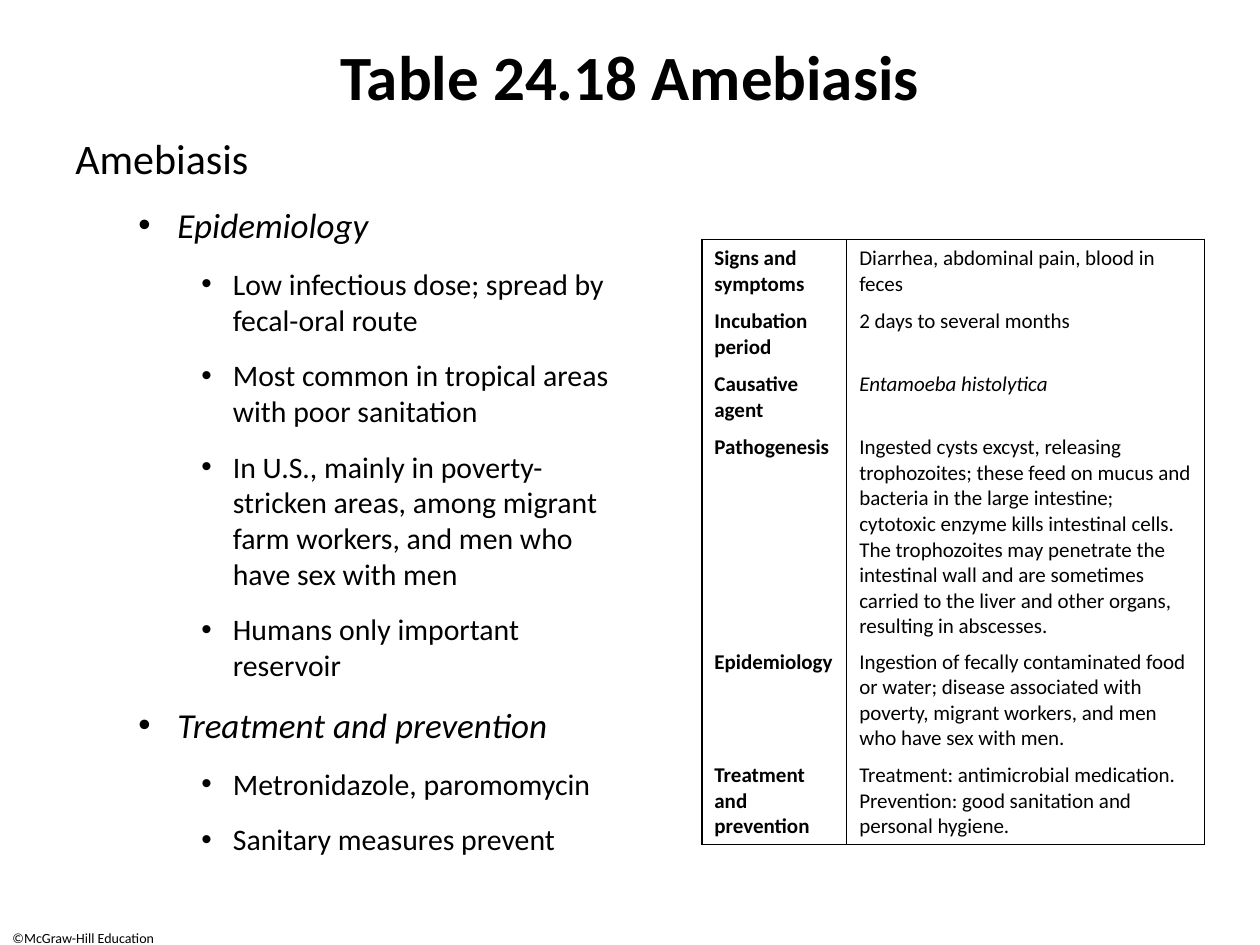
from lxml import etree
from pptx import Presentation
from pptx import util as u
from pptx.dml import color
from pptx.enum import text
from pptx.oxml import ns

FONT = "Calibri"
BLACK = "000000"
OUTLINE = [
    (0, "Amebiasis"),
    (1, "Epidemiology"),
    (2, "Low infectious dose; spread by fecal-oral route"),
    (2, "Most common in tropical areas with poor sanitation"),
    (2, "In U.S., mainly in poverty-stricken areas, among migrant farm workers, "
        "and men who have sex with men"),
    (2, "Humans only important reservoir"),
    (1, "Treatment and prevention"),
    (2, "Metronidazole, paromomycin"),
    (2, "Sanitary measures prevent"),
]
LEVELS = {0: (24, 0, 0), 1: (20, 0.81, -0.31), 2: (17, 1.25, -0.25)}
DISEASE_FACTS = [
    ("Signs and symptoms", "Diarrhea, abdominal pain, blood in feces", 0.46),
    ("Incubation period", "2 days to several months", 0.46),
    ("Causative agent", "Entamoeba histolytica", 0.46),
    ("Pathogenesis",
     "Ingested cysts excyst, releasing trophozoites; these feed on mucus and bacteria "
     "in the large intestine; cytotoxic enzyme kills intestinal cells. The trophozoites "
     "may penetrate the intestinal wall and are sometimes carried to the liver and other "
     "organs, resulting in abscesses.", 1.57),
    ("Epidemiology",
     "Ingestion of fecally contaminated food or water; disease associated with poverty, "
     "migrant workers, and men who have sex with men.", 0.83),
    ("Treatment and prevention",
     "Treatment: antimicrobial medication. Prevention: good sanitation and personal "
     "hygiene.", 0.65),
]


def paint(target, hex_color):
    target.rgb = color.RGBColor.from_string(hex_color)


def format_runs(paragraph, size, bold=False, italic=False):
    for run in paragraph.runs:
        run.font.name = FONT
        run.font.size = u.Pt(size)
        run.font.bold = bold
        run.font.italic = italic
        paint(run.font.color, BLACK)


def place_title(slide, left, top, width, height):
    title = slide.shapes.title
    title.left, title.top = u.Inches(left), u.Inches(top)
    title.width, title.height = u.Inches(width), u.Inches(height)
    frame = title.text_frame
    frame.text = "Table 24.18 Amebiasis"
    frame.auto_size = text.MSO_AUTO_SIZE.NONE
    frame.vertical_anchor = text.MSO_ANCHOR.TOP
    frame.paragraphs[0].alignment = text.PP_ALIGN.CENTER
    format_runs(frame.paragraphs[0], 36, bold=True)


def add_text_frame(slide, left, top, width, height):
    frame = slide.shapes.add_textbox(
        u.Inches(left), u.Inches(top), u.Inches(width), u.Inches(height)).text_frame
    frame.word_wrap = True
    return frame


def add_outline(slide, left, top, width, height):
    frame = add_text_frame(slide, left, top, width, height)
    for index, (level, wording) in enumerate(OUTLINE):
        size, margin, indent = LEVELS[level]
        paragraph = frame.add_paragraph() if index else frame.paragraphs[0]
        paragraph.text = wording
        paragraph.level = level
        if level:
            properties = paragraph._p.get_or_add_pPr()
            properties.set("marL", str(u.Inches(margin)))
            properties.set("indent", str(u.Inches(indent)))
            etree.SubElement(properties, ns.qn("a:buFont"), typeface="Arial")
            etree.SubElement(properties, ns.qn("a:buChar"), char="•")
        if index:
            paragraph.space_before = u.Pt(size * 0.2)
        paragraph.space_after = u.Pt(8)
        format_runs(paragraph, size, italic=level == 1)


def set_borders(cell, visible):
    properties = cell._tc.get_or_add_tcPr()
    for side in "LRTB":
        line = etree.SubElement(properties, ns.qn("a:ln" + side), w=str(u.Pt(1)))
        if side in visible:
            fill = etree.SubElement(line, ns.qn("a:solidFill"))
            etree.SubElement(fill, ns.qn("a:srgbClr"), val=BLACK)
        else:
            etree.SubElement(line, ns.qn("a:noFill"))


def add_disease_table(slide, left, top, width, height):
    table = slide.shapes.add_table(
        len(DISEASE_FACTS), 2, u.Inches(left), u.Inches(top),
        u.Inches(width), u.Inches(height)).table
    table.first_row = table.horz_banding = False
    label_width = 1.15
    table.columns[0].width = u.Inches(label_width)
    table.columns[1].width = u.Inches(width - label_width)
    last = len(DISEASE_FACTS) - 1
    for row, (label, fact, row_height) in enumerate(DISEASE_FACTS):
        table.rows[row].height = u.Inches(row_height)
        visible = "LR" + ("T" if row == 0 else "") + ("B" if row == last else "")
        for column, wording in enumerate((label, fact)):
            cell = table.cell(row, column)
            cell.text_frame.text = wording
            format_runs(cell.text_frame.paragraphs[0], 12, bold=column == 0,
                        italic=wording == "Entamoeba histolytica")
            set_borders(cell, visible)
            cell.fill.background()


def add_copyright(slide, left, top, width, height):
    frame = add_text_frame(slide, left, top, width, height)
    frame.text = "©McGraw-Hill Education"
    format_runs(frame.paragraphs[0], 8)


def main():
    deck = Presentation()
    deck.slide_width, deck.slide_height = u.Inches(10), u.Inches(7.5)
    slide = deck.slides.add_slide(deck.slide_layouts.get_by_name("Title Only"))
    add_copyright(slide, 0, 7.33, 1.5, 0.17)
    place_title(slide, 2.18, 0.25, 5.64, 0.67)
    add_outline(slide, 0.5, 1, 4.5, 6.25)
    add_disease_table(slide, 5.57, 1.9, 3.99, 4.43)
    deck.save("out.pptx")


if __name__ == "__main__":
    main()
